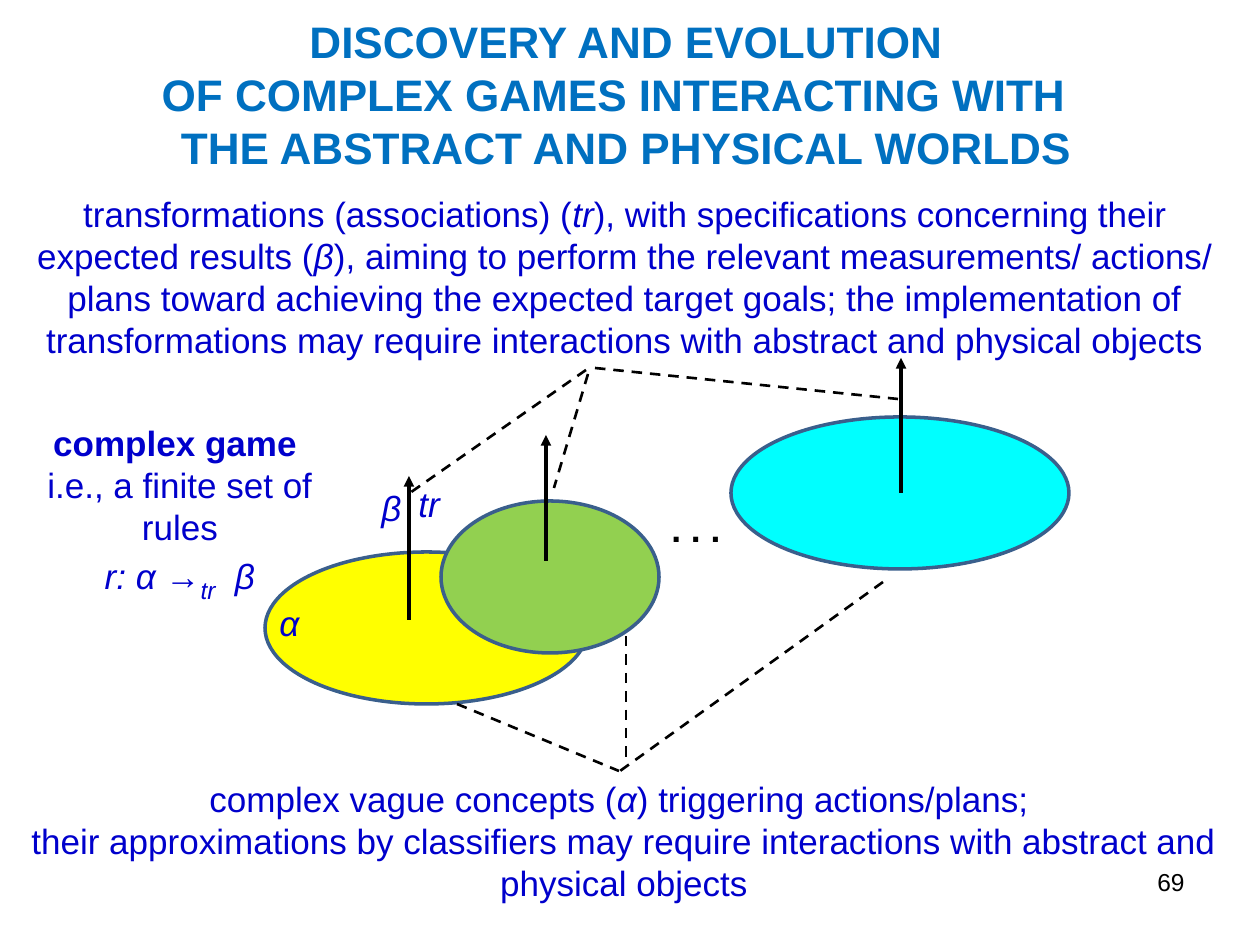
"""Build the slide on complex games interacting with abstract and physical worlds."""
from lxml import etree
from pptx import Presentation
from pptx.dml.color import RGBColor
from pptx.enum.dml import MSO_LINE
from pptx.enum.shapes import MSO_CONNECTOR, MSO_SHAPE
from pptx.enum.text import MSO_ANCHOR, PP_ALIGN
from pptx.oxml.ns import qn
from pptx.util import Pt

STRAIGHT, ELLIPSE, DASH = MSO_CONNECTOR.STRAIGHT, MSO_SHAPE.OVAL, MSO_LINE.DASH
LEFT, CENTER, RIGHT = PP_ALIGN.LEFT, PP_ALIGN.CENTER, PP_ALIGN.RIGHT
TOP, MIDDLE = MSO_ANCHOR.TOP, MSO_ANCHOR.MIDDLE
EMU_PER_PX = 914400 / 126

THEME = {
    "font": "Arial",
    "outline": "3A5F8C", "ink": "000000",
    "outline_pt": 2, "arrow_pt": 2, "dash_pt": 1.5,
    "text": {
        "title": {"size": 25.2, "color": "0070C0", "bold": True},
        "body": {"size": 20, "color": "0000CC"},
        "dots": {"size": 20.2, "color": "000000", "bold": True},
        "number": {"size": 14, "color": "000000"},
    },
}
ITALIC, BOLD = {"italic": True}, {"bold": True}
SUBSCRIPT = {"italic": True, "size": 24, "baseline": -25000}

CONCEPTS = [
    ((265, 552, 323, 152), "FFFF00"),
    ((441, 501, 218, 152), "92D050"),
    ((731, 417, 338, 152), "00FFFF"),
]
TRANSFORMATION_ARROWS = [(409, 620, 476), (546, 561, 435), (901, 493, 358)]
CALLOUTS = [
    (626, 636, 626, 764), (457, 704, 619, 771), (883, 582, 620, 771),
    (586, 370, 407, 495), (588, 374, 554, 488), (595, 368, 898, 399),
]
TEXTS = [
    ((-4, 14, 1260, 159), "title", CENTER, MIDDLE, [
        [("DISCOVERY AND EVOLUTION", {})],
        [("OF COMPLEX GAMES INTERACTING WITH  ", {})],
        [("THE ABSTRACT AND PHYSICAL WORLDS", {})],
    ]),
    ((10, 186, 1230, 183), "body", CENTER, TOP, [[
        ("transformations (associations) (", {}), ("tr", ITALIC),
        ("), with specifications concerning their expected results (", {}),
        ("β", ITALIC),
        ("), aiming to perform the relevant measurements/ actions/ plans toward "
         "achieving the expected target goals; the implementation of "
         "transformations may require interactions with abstract and physical "
         "objects", {}),
    ]]),
    ((15, 415, 330, 199), "body", CENTER, TOP, [
        [("complex game ", BOLD)],
        [("i.e., a finite set of rules", {})],
        [("r: α →", ITALIC), ("tr", SUBSCRIPT), ("  β", ITALIC)],
    ]),
    ((369, 480, 60, 60), "body", LEFT, TOP, [[("β", ITALIC)]]),
    ((267, 595, 53, 60), "body", LEFT, TOP, [[("α", ITALIC)]]),
    ((406, 476, 82, 60), "body", LEFT, TOP, [[("tr", ITALIC)]]),
    ((659, 501, 105, 63), "dots", LEFT, TOP, [[(". . .", {})]]),
    ((15, 771, 1218, 140), "body", CENTER, TOP, [
        [("complex vague concepts (", {}), ("α", ITALIC),
         (") triggering actions/plans; ", {})],
        [("their approximations by classifiers may require interactions with "
          "abstract and physical objects", {})],
    ]),
    ((903, 861, 294, 66), "number", RIGHT, TOP, [[("69", {})]]),
]


def px(*lengths):
    return [round(length * EMU_PER_PX) for length in lengths]


def rgb(color):
    return RGBColor.from_string(color)


def add_concept(slide, box, color):
    concept = slide.shapes.add_shape(ELLIPSE, *px(*box))
    concept.shadow.inherit = False
    concept.fill.solid()
    concept.fill.fore_color.rgb = rgb(color)
    concept.line.color.rgb = rgb(THEME["outline"])
    concept.line.width = Pt(THEME["outline_pt"])


def add_line(slide, ends, width):
    connector = slide.shapes.add_connector(STRAIGHT, *px(*ends))
    connector.line.color.rgb = rgb(THEME["ink"])
    connector.line.width = Pt(width)
    etree.SubElement(connector._element.spPr, qn("a:effectLst"))
    return connector.line


def add_text(slide, box, role, align, anchor, paragraphs):
    frame = slide.shapes.add_textbox(*px(*box)).text_frame
    for name, value in {"word_wrap": True, "vertical_anchor": anchor}.items():
        setattr(frame, name, value)
    for index, pieces in enumerate(paragraphs):
        paragraph = frame.add_paragraph() if index else frame.paragraphs[0]
        paragraph.alignment = align
        for words, changes in pieces:
            style = THEME["text"][role] | changes
            run = paragraph.add_run()
            run.text = words
            run.font.color.rgb = rgb(style["color"])
            font_format = {
                "name": THEME["font"], "size": Pt(style["size"]),
                "bold": style.get("bold", False),
                "italic": style.get("italic", False),
            }
            for name, value in font_format.items():
                setattr(run.font, name, value)
            if "baseline" in style:
                run._r.get_or_add_rPr().set("baseline", str(style["baseline"]))


def main():
    presentation = Presentation()
    presentation.slide_width, presentation.slide_height = px(1260, 945)
    slide = presentation.slides.add_slide(presentation.slide_layouts[6])
    for box, color in CONCEPTS:
        add_concept(slide, box, color)
    for x, start, tip in TRANSFORMATION_ARROWS:
        arrow = add_line(slide, (x, start, x, tip), THEME["arrow_pt"])
        etree.SubElement(arrow._get_or_add_ln(), qn("a:tailEnd"), type="triangle")
    for ends in CALLOUTS:
        add_line(slide, ends, THEME["dash_pt"]).dash_style = DASH
    for text in TEXTS:
        add_text(slide, *text)
    presentation.save("out.pptx")


if __name__ == "__main__":
    main()
